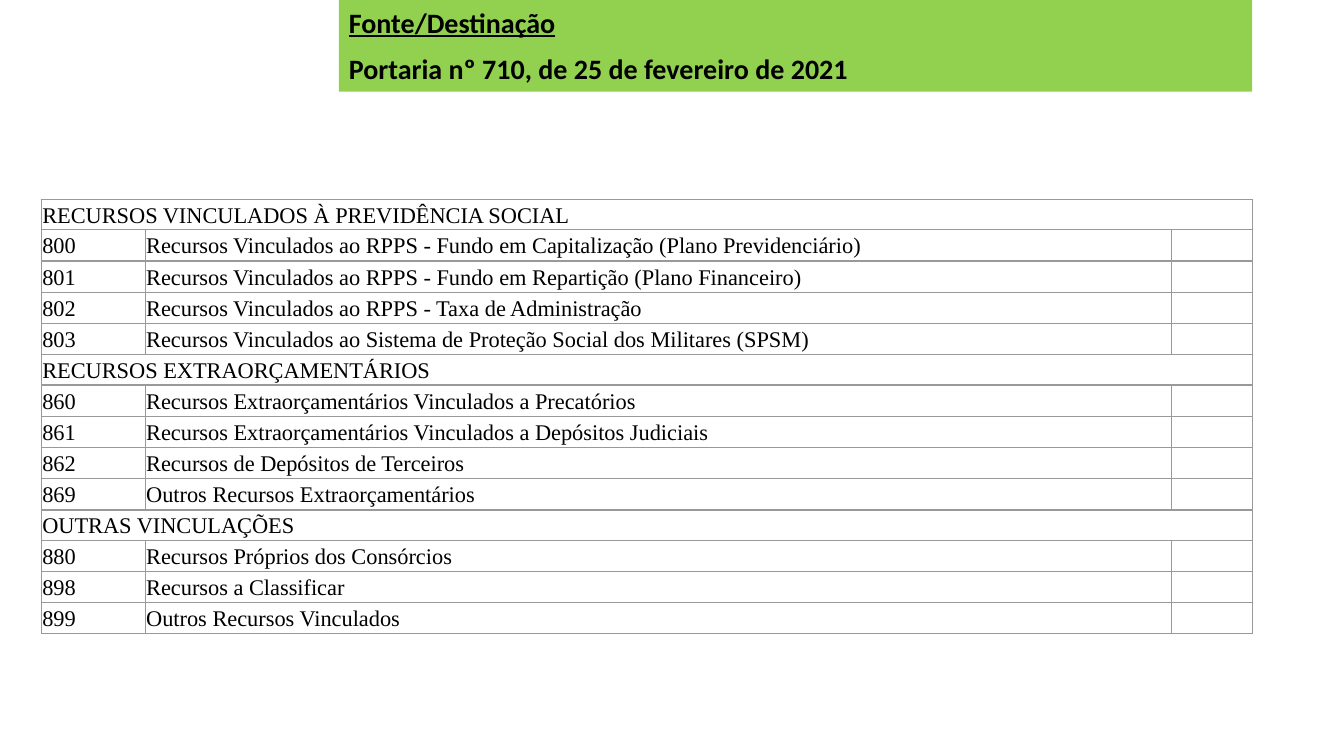
"""Build the slide listing the linked resource codes of Portaria nº 710."""
from dataclasses import dataclass

from lxml import etree
from pptx import Presentation
from pptx import util as u
from pptx.dml.color import RGBColor
from pptx.enum import text
from pptx.oxml import ns


@dataclass(frozen=True)
class Theme:
    ink: RGBColor = RGBColor.from_string("000000")
    banner: RGBColor = RGBColor.from_string("92D050")
    border: str = "999999"
    title_font: str = "Calibri"
    table_font: str = "Times New Roman"
    title_size: int = 20
    table_size: int = 16


theme = Theme()
groups = {
    "RECURSOS VINCULADOS À PREVIDÊNCIA SOCIAL": [
        ("800", "Recursos Vinculados ao RPPS - Fundo em Capitalização (Plano Previdenciário)"),
        ("801", "Recursos Vinculados ao RPPS - Fundo em Repartição (Plano Financeiro)"),
        ("802", "Recursos Vinculados ao RPPS - Taxa de Administração"),
        ("803", "Recursos Vinculados ao Sistema de Proteção Social dos Militares (SPSM)"),
    ],
    "RECURSOS EXTRAORÇAMENTÁRIOS": [
        ("860", "Recursos Extraorçamentários Vinculados a Precatórios"),
        ("861", "Recursos Extraorçamentários Vinculados a Depósitos Judiciais"),
        ("862", "Recursos de Depósitos de Terceiros"),
        ("869", "Outros Recursos Extraorçamentários"),
    ],
    "OUTRAS VINCULAÇÕES": [
        ("880", "Recursos Próprios dos Consórcios"),
        ("898", "Recursos a Classificar"),
        ("899", "Outros Recursos Vinculados"),
    ],
}


def format_run(r, font, size):
    r.font.name = font
    r.font.size = u.Pt(size)
    r.font.color.rgb = theme.ink


def add_borders(cell):
    tc_pr = cell._tc.get_or_add_tcPr()
    for i, side in enumerate(("lnL", "lnR", "lnT", "lnB")):
        ln = etree.Element(ns.qn(f"a:{side}"), w=str(u.Pt(1)))
        fill = etree.SubElement(ln, ns.qn("a:solidFill"))
        etree.SubElement(fill, ns.qn("a:srgbClr"), val=theme.border)
        tc_pr.insert(i, ln)


prs = Presentation()
prs.slide_width, prs.slide_height = u.Inches(13.33), u.Inches(7.5)
s = prs.slides.add_slide(prs.slide_layouts[5])

title = s.shapes.title
title.left, title.top = u.Inches(3.36), u.Inches(0)
title.width, title.height = u.Inches(9.06), u.Inches(0.91)
title.fill.solid()
title.fill.fore_color.rgb = theme.banner
tf = title.text_frame
tf.text = "Fonte/Destinação\nPortaria nº 710, de 25 de fevereiro de 2021"
tf.word_wrap = True
tf.auto_size = text.MSO_AUTO_SIZE.NONE
tf.vertical_anchor = text.MSO_ANCHOR.TOP
for p in tf.paragraphs:
    p.alignment = text.PP_ALIGN.LEFT
    format_run(p.runs[0], theme.title_font, theme.title_size)
    p.runs[0].font.bold = True
tf.paragraphs[0].runs[0].font.underline = True
tf.paragraphs[0].space_after = u.Pt(9.5)

rows = []
for heading, items in groups.items():
    rows.append((heading, "", ""))
    rows.extend((code, name, "") for code, name in items)

frame = s.shapes.add_table(len(rows), 3, u.Inches(0.41), u.Inches(1.98),
                           u.Inches(12.01), u.Inches(4.31))
table = frame.table
table.first_row = table.horz_banding = False
for column, width in zip(table.columns, (1.03, 10.18, 0.8)):
    column.width = u.Inches(width)

for i, values in enumerate(rows):
    is_heading = values[0] in groups
    table.rows[i].height = u.Inches(0.3 if is_heading else 0.31)
    for cell, value in zip(table.rows[i].cells, values):
        cell.margin_left = cell.margin_right = u.Inches(0.01)
        cell.margin_top = cell.margin_bottom = u.Inches(0.01)
        cell.vertical_anchor = text.MSO_ANCHOR.MIDDLE
        cell.fill.background()
        add_borders(cell)
        p = cell.text_frame.paragraphs[0]
        p.text = value
        p.line_spacing = 1.07
        for r in p.runs:
            format_run(r, theme.table_font, theme.table_size)
        if not value:
            etree.SubElement(p._p, ns.qn("a:endParaRPr"), sz=str(theme.table_size * 75))
    if is_heading:
        table.cell(i, 0).merge(table.cell(i, 2))

prs.save("out.pptx")
